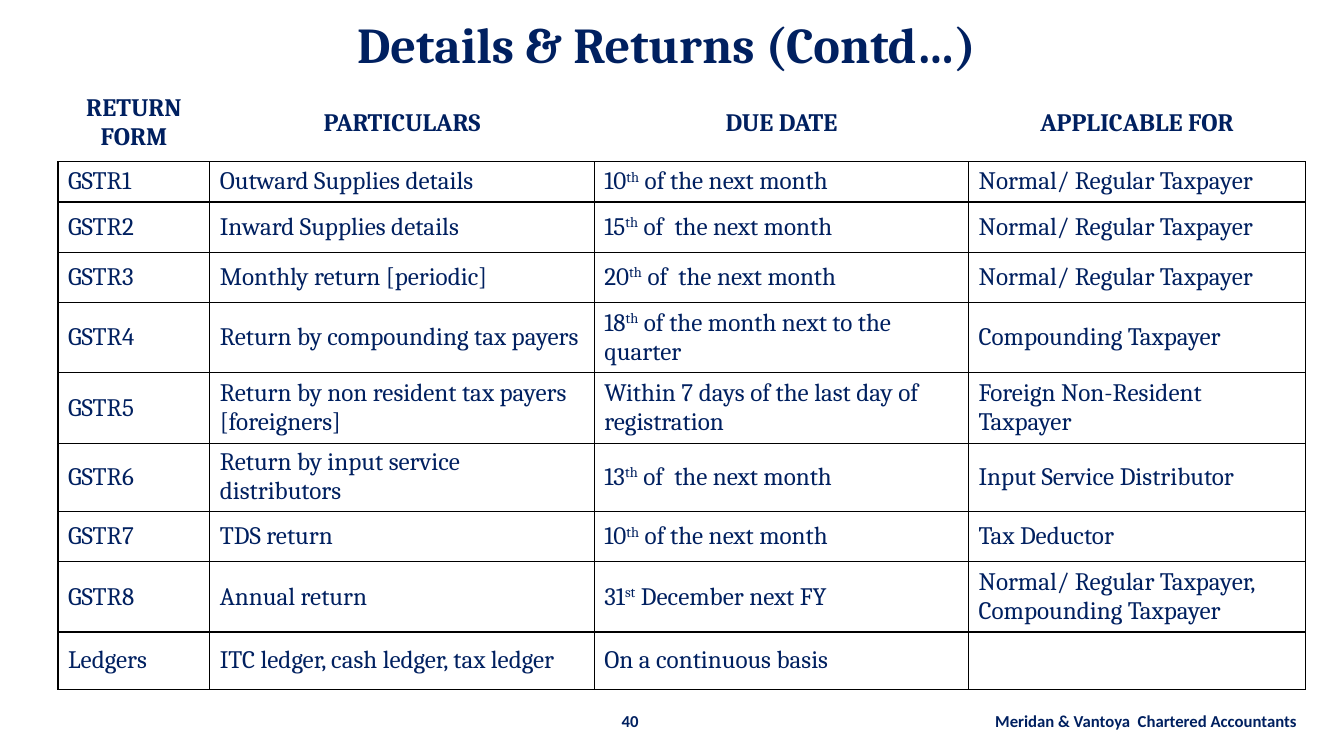
import pptx
import pptx.dml.color
import pptx.enum.text
import pptx.oxml
import pptx.oxml.ns
import pptx.util

Cm = pptx.util.Cm
Pt = pptx.util.Pt
RGBColor = pptx.dml.color.RGBColor
ALIGN = pptx.enum.text.PP_ALIGN
ANCHOR = pptx.enum.text.MSO_ANCHOR

NAVY = RGBColor(0x00, 0x20, 0x60)
WHITE = RGBColor(0xFF, 0xFF, 0xFF)
BLACK = RGBColor(0x00, 0x00, 0x00)

TITLE_FONT = {"name": "Cambria", "size": Pt(36), "bold": True}
HEAD_FONT = {"name": "Cambria", "size": Pt(18), "bold": True}
BODY_FONT = {"name": "Cambria", "size": Pt(18), "bold": False}
FOOTER_FONT = {"name": "Calibri", "size": Pt(12), "bold": True}

COL_WIDTHS = [3.84, 9.73, 9.47, 8.53]
ROW_HEIGHTS = [1.96, 1.02, 1.27, 1.27, 1.78, 1.78, 1.73, 1.27, 1.78, 1.45]

# Text between a pair of carets is superscript.
RETURNS = [
    ["RETURN FORM", "PARTICULARS", "DUE DATE", "APPLICABLE FOR"],
    ["GSTR1", "Outward Supplies details", "10^th^ of the next month",
     "Normal/ Regular Taxpayer"],
    ["GSTR2", "Inward Supplies details", "15^th^ of  the next month",
     "Normal/ Regular Taxpayer"],
    ["GSTR3", "Monthly return [periodic]", "20^th^ of  the next month",
     "Normal/ Regular Taxpayer"],
    ["GSTR4", "Return by compounding tax payers",
     "18^th^ of the month next to the quarter", "Compounding Taxpayer"],
    ["GSTR5", "Return by non resident tax payers [foreigners]",
     "Within 7 days of the last day of registration",
     "Foreign Non-Resident Taxpayer"],
    ["GSTR6", "Return by input service distributors",
     "13^th^ of  the next month", "Input Service Distributor"],
    ["GSTR7", "TDS return", "10^th^ of the next month", "Tax Deductor"],
    ["GSTR8", "Annual return", "31^st^ December next FY",
     "Normal/ Regular Taxpayer, Compounding Taxpayer"],
    ["Ledgers", "ITC ledger, cash ledger, tax ledger",
     "On a continuous basis", ""],
]


def write_text(tf, text, font, align):
    """Fill the first paragraph, raising the parts between carets."""
    tf.word_wrap = True
    p = tf.paragraphs[0]
    p.alignment = align
    for i, part in enumerate(text.split("^")):
        if not part:
            continue
        r = p.add_run()
        r.text = part
        for name, value in font.items():
            setattr(r.font, name, value)
        r.font.color.rgb = NAVY
        if i % 2:
            r.font._element.set("baseline", "30000")


def set_borders(cell, colors):
    """Draw 1 pt borders; colors maps the sides L, R, T and B, in that order."""
    tc_pr = cell._tc.get_or_add_tcPr()
    for side, color in colors.items():
        tc_pr.append(pptx.oxml.parse_xml(
            f'<a:ln{side} {pptx.oxml.ns.nsdecls("a")} w="12700"><a:solidFill>'
            f'<a:srgbClr val="{color}"/></a:solidFill></a:ln{side}>'))


def add_title(s, text):
    title = s.shapes.title
    title.left, title.top = Cm(0.66), Cm(0.2)
    title.width, title.height = Cm(32.41), Cm(1.8)
    tf = title.text_frame
    tf.auto_size = pptx.enum.text.MSO_AUTO_SIZE.NONE
    tf.vertical_anchor = ANCHOR.MIDDLE
    write_text(tf, text, TITLE_FONT, ALIGN.CENTER)


def add_returns_table(s):
    frame = s.shapes.add_table(
        len(RETURNS), len(COL_WIDTHS), Cm(1.47), Cm(2.13),
        Cm(sum(COL_WIDTHS)), Cm(sum(ROW_HEIGHTS)))
    table = frame.table
    table.horz_banding = False
    for col, width in zip(table.columns, COL_WIDTHS):
        col.width = Cm(width)
    for row, height in zip(table.rows, ROW_HEIGHTS):
        row.height = Cm(height)
    for i, texts in enumerate(RETURNS):
        is_head = i == 0
        font = HEAD_FONT if is_head else BODY_FONT
        align = ALIGN.CENTER if is_head else ALIGN.LEFT
        borders = dict.fromkeys("LRT", WHITE if is_head else BLACK)
        borders["B"] = BLACK
        for j, text in enumerate(texts):
            cell = table.cell(i, j)
            cell.vertical_anchor = ANCHOR.MIDDLE
            set_borders(cell, borders)
            cell.fill.solid()
            cell.fill.fore_color.rgb = WHITE
            write_text(cell.text_frame, text, font, align)


def add_footer_text(s, text, left, width, align):
    box = s.shapes.add_textbox(Cm(left), Cm(17.86), Cm(width), Cm(0.8))
    write_text(box.text_frame, text, FOOTER_FONT, align)


def main():
    prs = pptx.Presentation()
    prs.slide_width, prs.slide_height = Cm(34.01), Cm(19.05)
    s = prs.slides.add_slide(prs.slide_layouts[5])
    add_returns_table(s)
    add_title(s, "Details & Returns (Contd…)")
    add_footer_text(s, "40", 15.48, 2, ALIGN.LEFT)
    add_footer_text(s, "Meridan & Vantoya  Chartered Accountants",
                    22.07, 11, ALIGN.RIGHT)
    prs.save("out.pptx")


if __name__ == "__main__":
    main()
